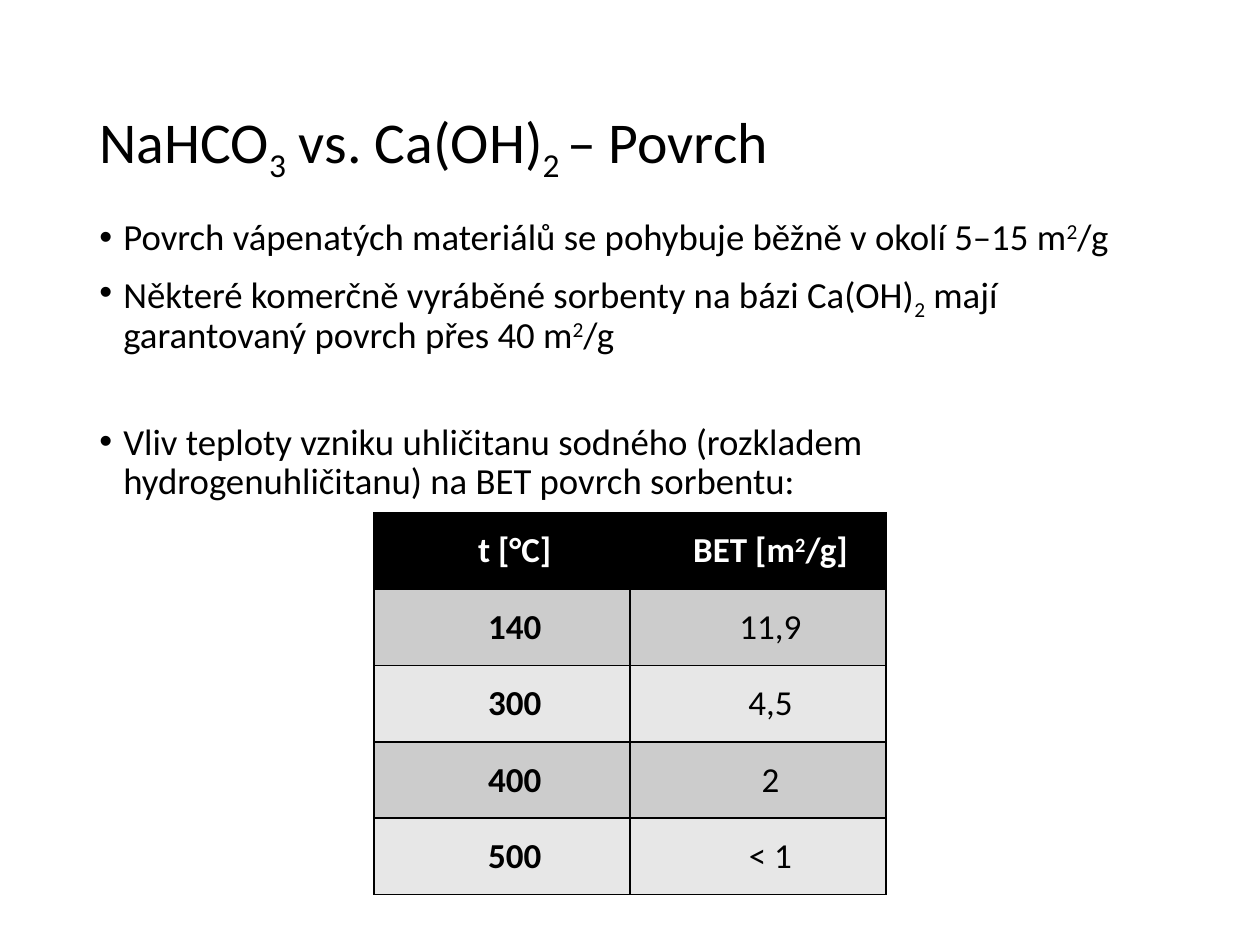
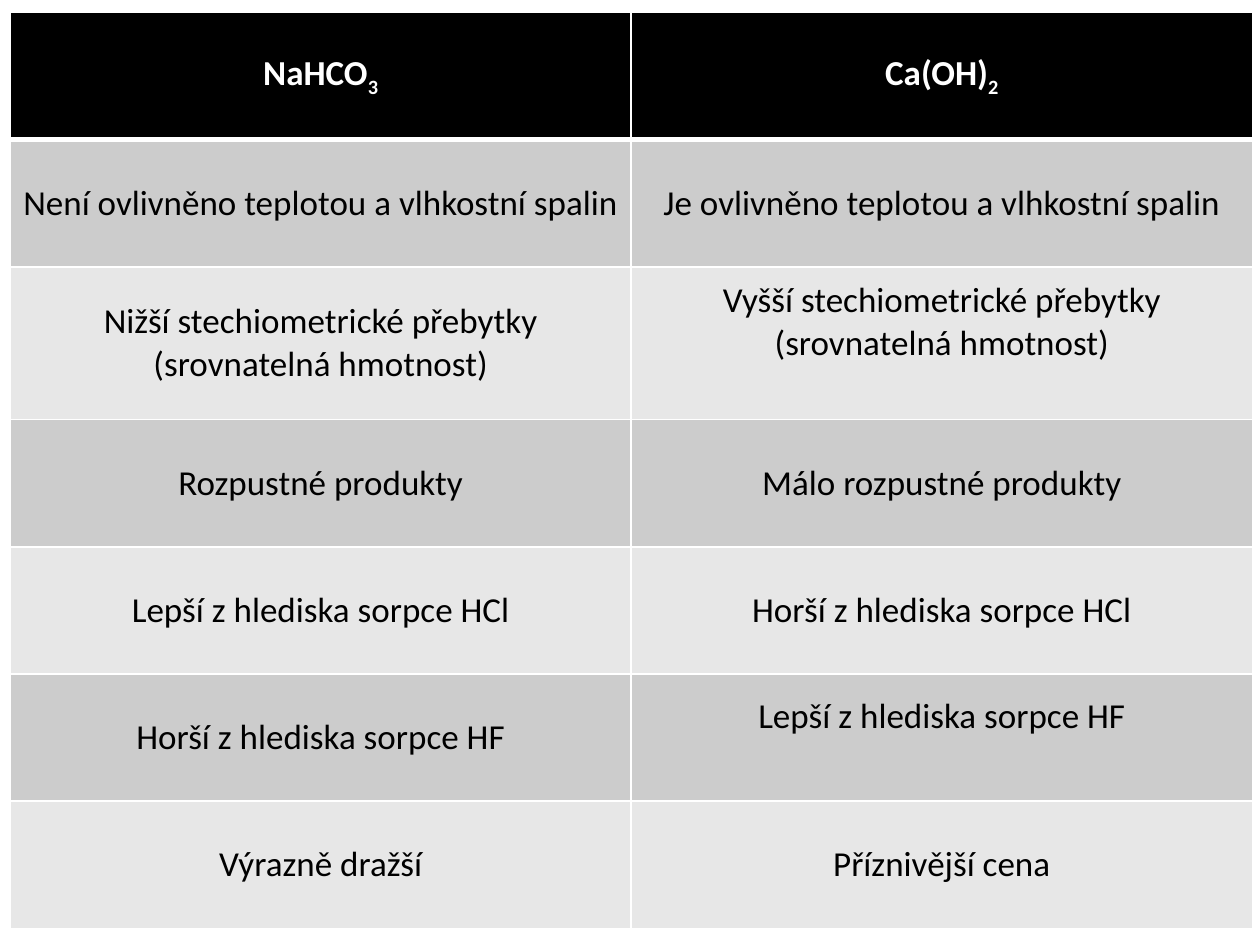
"""Build two slides that compare the sorbents NaHCO3 and Ca(OH)2."""
from dataclasses import dataclass

from lxml import etree
from pptx import Presentation
from pptx import util as u
from pptx.dml import color
from pptx.enum import text
from pptx.oxml import ns


@dataclass(frozen=True)
class Theme:
    """Hold the shared colours, font and type sizes."""
    font: str = "Calibri"
    ink: str = "000000"
    paper: str = "FFFFFF"
    dark: str = "CCCCCC"
    light: str = "E7E7E7"
    title: int = 33
    body: int = 21
    cell: int = 20


@dataclass(frozen=True)
class Box:
    """Hold a place on the slide in columns and rows of the grid."""
    left: float
    top: float
    width: float
    height: float

    def place(self):
        """Return the four lengths as slide units."""
        return [unit(n) for n in (self.left, self.top, self.width, self.height)]


THEME = Theme()
WIDE, HIGH = u.Inches(10), u.Inches(7.5)
COLS = 100
BASE = {"_": "-25000", "^": "30000"}

HEAD = Box(6.9, 4, 86.2, 14.5)
BODY = Box(6.9, 16.9, 86.2, 50.7)
GRID = Box(29.7, 40.7, 40.6, 30.3)
FULL = Box(0.8, 1, 98.6, 72.7)

TITLE = "NaHCO|_3| vs. Ca(OH)|_2 |– Povrch"
POINTS = [
    ("Povrch vápenatých materiálů se pohybuje běžně v okolí 5–15 m|^2|/g", 7.5),
    ("Některé komerčně vyráběné sorbenty na bázi Ca(OH)|_2| mají "
     "garantovaný povrch přes 40 m|^2|/g", 7.5),
    ("Vliv teploty vzniku uhličitanu sodného (rozkladem hydrogenuhličitanu) "
     "na BET povrch sorbentu:", 38),
]
AREAS = [
    ("t [°C]", "BET [m|^2|/g]"),
    ("140", "11,9"),
    ("300", "4,5"),
    ("400", "2"),
    ("500", "< 1"),
]
TRAITS = [
    ("NaHCO|_3", "Ca(OH)|_2"),
    ("Není ovlivněno teplotou a vlhkostní spalin",
     "Je ovlivněno teplotou a vlhkostní spalin"),
    ("Nižší stechiometrické přebytky (srovnatelná hmotnost)",
     "Vyšší stechiometrické přebytky (srovnatelná hmotnost)"),
    ("Rozpustné produkty", "Málo rozpustné produkty"),
    ("Lepší z hlediska sorpce HCl", "Horší z hlediska sorpce HCl"),
    ("Horší z hlediska sorpce HF", "Lepší z hlediska sorpce HF"),
    ("Výrazně dražší", "Příznivější cena"),
]
RAISED = {(2, 1), (5, 1)}


def unit(count):
    """Turn grid steps into slide units."""
    return round(WIDE * count / COLS)


def style(item, **form):
    """Set each format value on an object."""
    for name, value in form.items():
        setattr(item, name, value)


def write(para, words, size, ink=THEME.ink, bold=False):
    """Write runs split by bars, where _ lowers and ^ raises a run."""
    for part in words.split("|"):
        run = para.add_run()
        run.text = part.lstrip("_^")
        style(run.font, name=THEME.font, size=u.Pt(size), bold=bold)
        run.font.color.rgb = color.RGBColor.from_string(ink)
        if part[0] in BASE:
            run.font._element.set("baseline", BASE[part[0]])


def indent(para, left, first):
    """Set the left margin and first line indent in inches."""
    props = para._p.get_or_add_pPr()
    props.set("marL", str(u.Inches(left)))
    props.set("indent", str(u.Inches(first)))
    return props


def edge(cell, side, ink, width):
    """Draw one border of a cell."""
    props = cell._tc.get_or_add_tcPr()
    line = etree.SubElement(props, ns.qn("a:ln" + side), w=str(u.Pt(width)))
    fill = etree.SubElement(line, ns.qn("a:solidFill"))
    etree.SubElement(fill, ns.qn("a:srgbClr"), val=ink)


def heading(slide, box):
    """Place and write the title."""
    shape = slide.shapes.title
    style(shape, **dict(zip(("left", "top", "width", "height"), box.place())))
    frame = shape.text_frame
    style(frame, word_wrap=True, auto_size=text.MSO_AUTO_SIZE.NONE,
          vertical_anchor=text.MSO_ANCHOR.MIDDLE)
    para = frame.paragraphs[0]
    style(para, alignment=text.PP_ALIGN.LEFT, line_spacing=0.9)
    write(para, TITLE, THEME.title)


def bullets(slide, box):
    """Place the bulleted points."""
    frame = slide.shapes.add_textbox(*box.place()).text_frame
    frame.word_wrap = True
    for row, (words, gap) in enumerate(POINTS):
        para = frame.add_paragraph() if row else frame.paragraphs[0]
        style(para, line_spacing=0.9, space_before=u.Pt(gap))
        props = indent(para, 0.19, -0.19)
        etree.SubElement(props, ns.qn("a:buFont"), typeface="Arial")
        etree.SubElement(props, ns.qn("a:buChar"), char="•")
        write(para, words, THEME.body)


def table(slide, box, data, rule, heavy=1, shares=None, strong=False,
          shift=0, inset=None, raised=()):
    """Place a banded table with a black header row."""
    shares = shares or [1] * len(data)
    grid = slide.shapes.add_table(len(data), len(data[0]), *box.place()).table
    for col in grid.columns:
        col.width = unit(box.width / len(data[0]))
    for y, (row, words) in enumerate(zip(grid.rows, data)):
        row.height = unit(box.height * shares[y] / sum(shares))
        back = (THEME.dark if y % 2 else THEME.light) if y else THEME.ink
        widths = {"L": 1, "R": 1, "T": heavy if y == 1 else 1,
                  "B": 1 if y else heavy}
        for x, cell in enumerate(row.cells):
            for side, width in widths.items():
                edge(cell, side, rule, width)
            cell.fill.solid()
            cell.fill.fore_color.rgb = color.RGBColor.from_string(back)
            style(cell, vertical_anchor=text.MSO_ANCHOR.MIDDLE, **(inset or {}))
            if (y, x) in raised:
                cell.margin_bottom = u.Inches(0.39)
            para = cell.text_frame.paragraphs[0]
            para.alignment = text.PP_ALIGN.CENTER
            indent(para, 0, shift)
            write(para, words[x], THEME.cell, ink=THEME.ink if y else THEME.paper,
                  bold=y == 0 or (strong and x == 0))


def surface(deck):
    """Build the slide on surface area."""
    slide = deck.slides.add_slide(deck.slide_layouts[5])
    heading(slide, HEAD)
    bullets(slide, BODY)
    inset = {"margin_left": u.Inches(0.05), "margin_right": u.Inches(0.05),
             "margin_top": 0, "margin_bottom": 0}
    table(slide, GRID, AREAS, THEME.ink, strong=True, shift=0.2, inset=inset)


def compare(deck):
    """Build the slide that compares both sorbents."""
    slide = deck.slides.add_slide(deck.slide_layouts[6])
    table(slide, FULL, TRAITS, THEME.paper, heavy=3,
          shares=[1, 1, 1.2, 1, 1, 1, 1], raised=RAISED)


def main():
    """Build and save the deck."""
    deck = Presentation()
    style(deck, slide_width=WIDE, slide_height=HIGH)
    surface(deck)
    compare(deck)
    deck.save("out.pptx")


if __name__ == "__main__":
    main()
